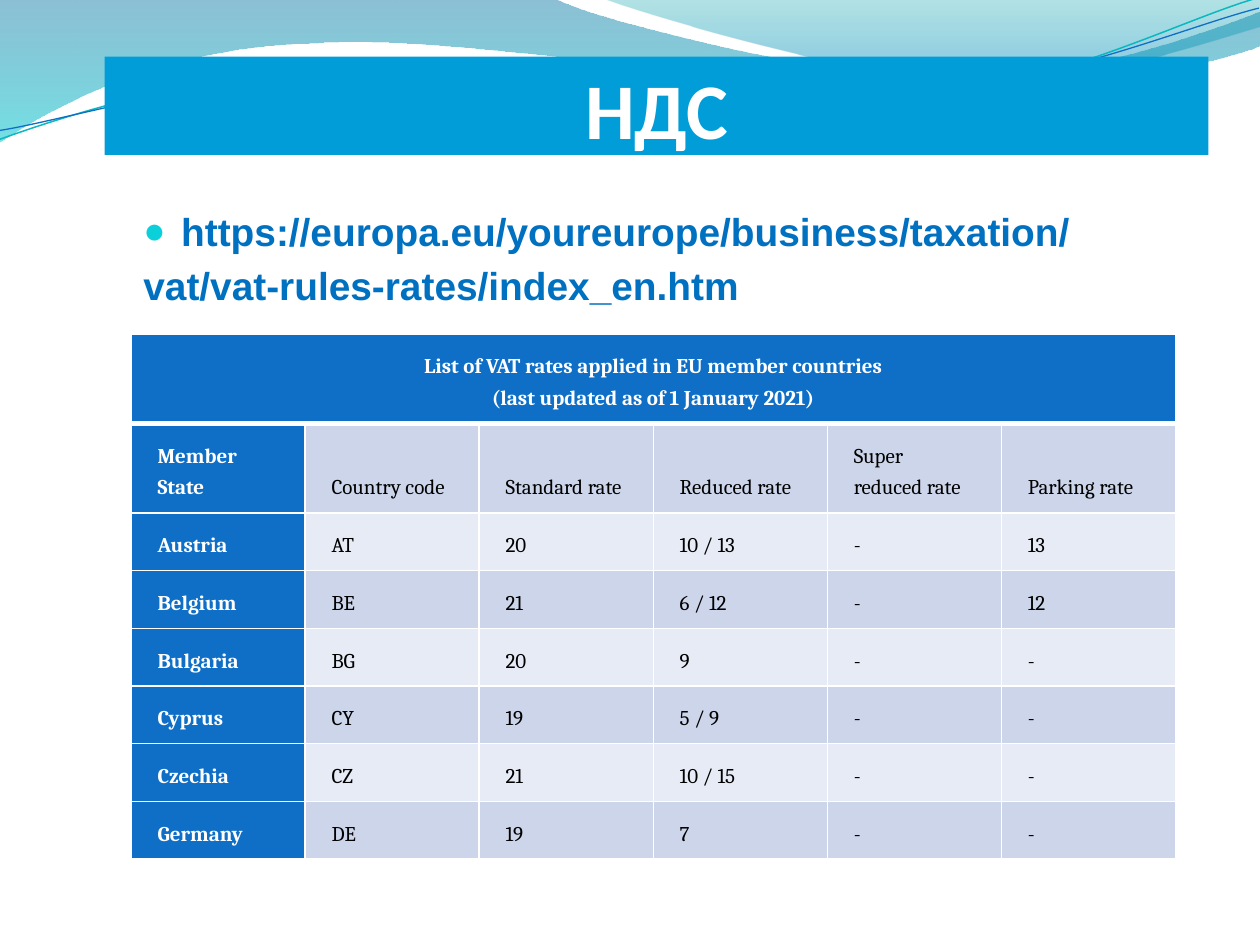
from lxml import etree
from pptx import Presentation
from pptx import util as u
from pptx.dml.color import RGBColor
from pptx.enum import text
from pptx.oxml.ns import qn

WHITE = RGBColor(0xFF, 0xFF, 0xFF)
BLACK = RGBColor(0, 0, 0)
TITLE_BLUE = RGBColor(0x00, 0x9D, 0xD9)
LINK_BLUE = RGBColor(0x00, 0x70, 0xC0)
HEADER_BLUE = RGBColor(0x0F, 0x6F, 0xC6)
BULLET_CYAN = RGBColor(0x0B, 0xD0, 0xD9)
LINE_TEAL = RGBColor(0x0A, 0xB8, 0xBF)
BANDS = (RGBColor(0xCC, 0xD5, 0xEA), RGBColor(0xE7, 0xEB, 0xF5))
UPPER_WAVE = ((0, RGBColor(0x00, 0x74, 0xA1), 45), (1, RGBColor(0x00, 0xC6, 0xCF), 55))
RIGHT_WAVE = ((0, RGBColor(0x00, 0xA1, 0xA9), 30), (0.8, RGBColor(0x00, 0x8B, 0xBF), 45))
THREAD_ROTATION = 357.3

TABLE_TITLE = "List of VAT rates applied in EU member countries\n(last updated as of 1 January 2021)"
RATES = [
    ("Member State", "Country code", "Standard rate", "Reduced rate", "Super reduced rate", "Parking rate"),
    ("Austria", "AT", "20", "10 / 13", "-", "13"),
    ("Belgium", "BE", "21", "6 / 12", "-", "12"),
    ("Bulgaria", "BG", "20", "9", "-", "-"),
    ("Cyprus", "CY", "19", "5 / 9", "-", "-"),
    ("Czechia", "CZ", "21", "10 / 15", "-", "-"),
    ("Germany", "DE", "19", "7", "-", "-"),
]


class SlideBuilder:
    def __init__(self, presentation):
        self.slide = presentation.slides.add_slide(presentation.slide_layouts[5])
        self.shapes = self.slide.shapes

    def format_text(self, frame, font, size, color, bold=True):
        for paragraph in frame.paragraphs:
            for run in paragraph.runs:
                run.font.name = font
                run.font.size = u.Pt(size)
                run.font.bold = bold
                run.font.color.rgb = color

    def outline(self, start, segments, close):
        nodes = [(u.Inches(s[i]), u.Inches(s[i + 1])) for s in segments for i in range(0, len(s), 2)]
        builder = self.shapes.build_freeform(*map(u.Inches, start))
        builder.add_line_segments(nodes, close=close)
        shape = builder.convert_to_shape()
        shape.shadow.inherit = False
        steps = iter(list(shape._element.iter(qn("a:lnTo"))))
        for segment in segments:
            step = next(steps)
            if len(segment) == 6:
                step.tag = qn("a:cubicBezTo")
                for _ in range(2):
                    control = next(steps)
                    step.append(control[0])
                    control.getparent().remove(control)
        return shape

    def wave(self, start, segments, stops):
        shape = self.outline(start, segments, True)
        shape.line.fill.background()
        shape.fill.gradient()
        shape.fill.gradient_angle = 270
        for stop, (position, color, _) in zip(shape.fill.gradient_stops, stops):
            stop.position = position
            stop.color.rgb = color
        for color, (_, _, opacity) in zip(shape._element.spPr.iter(qn("a:srgbClr")), stops):
            etree.SubElement(color, qn("a:alpha"), val=str(opacity * 1000))

    def thread(self, start, segments, color, width):
        shape = self.outline(start, segments, False)
        shape.rotation = THREAD_ROTATION
        shape.fill.background()
        shape.line.color.rgb = color
        shape.line.width = u.Pt(width)

    def title(self, words, left, top, width, height):
        title = self.shapes.title
        title.left, title.top, title.width, title.height = map(u.Inches, (left, top, width, height))
        title.fill.solid()
        title.fill.fore_color.rgb = TITLE_BLUE
        frame = title.text_frame
        frame.text = words
        frame.auto_size = text.MSO_AUTO_SIZE.NONE
        frame.vertical_anchor = text.MSO_ANCHOR.BOTTOM
        frame.margin_left = frame.margin_right = frame.margin_bottom = 0
        frame.margin_top = u.Inches(0.05)
        frame.paragraphs[0].alignment = text.PP_ALIGN.CENTER
        self.format_text(frame, "Calibri", 45, WHITE)
        self.shapes._spTree.append(title._element)

    def link(self, words, left, top, width, height):
        frame = self.shapes.add_textbox(*map(u.Inches, (left, top, width, height))).text_frame
        frame.word_wrap = True
        frame.text = words
        for paragraph in frame.paragraphs:
            paragraph.space_before = u.Pt(4.4)
        self.format_text(frame, "Arial", 22.2, LINK_BLUE)
        properties = frame.paragraphs[0]._p.get_or_add_pPr()
        properties.set("marL", str(u.Inches(0.3)))
        properties.set("indent", str(u.Inches(-0.3)))
        bullet_color = etree.SubElement(properties, qn("a:buClr"))
        etree.SubElement(bullet_color, qn("a:srgbClr"), val=str(BULLET_CYAN))
        etree.SubElement(properties, qn("a:buSzPct"), val="95000")
        etree.SubElement(properties, qn("a:buFont"), typeface="Arial")
        etree.SubElement(properties, qn("a:buChar"), char="●")

    def cell(self, cell, words, fill, color, bold, bottom=1, alignment=text.PP_ALIGN.LEFT):
        properties = cell._tc.get_or_add_tcPr()
        for side, width in (("L", 1), ("R", 1), ("T", 1), ("B", bottom)):
            border = etree.SubElement(properties, qn("a:ln" + side), w=str(u.Pt(width)))
            solid = etree.SubElement(border, qn("a:solidFill"))
            etree.SubElement(solid, qn("a:srgbClr"), val=str(WHITE))
        cell.fill.solid()
        cell.fill.fore_color.rgb = fill
        cell.vertical_anchor = text.MSO_ANCHOR.BOTTOM
        cell.margin_left = cell.margin_right = u.Inches(0.21)
        cell.margin_top = cell.margin_bottom = u.Inches(0.1)
        cell.text_frame.text = words
        for paragraph in cell.text_frame.paragraphs:
            paragraph.alignment = alignment
            paragraph.line_spacing = u.Pt(18)
        self.format_text(cell.text_frame, "Cambria", 12, color, bold)

    def rates_table(self, heading, rates, left, top, width, height):
        columns = len(rates[0])
        table = self.shapes.add_table(
            len(rates) + 1, columns, *map(u.Inches, (left, top, width, height))).table
        tall = 0.71
        short = (height - 2 * tall) / (len(rates) - 1)
        for index, row in enumerate(table.rows):
            row.height = u.Inches(tall if index < 2 else short)
        for column in range(columns):
            self.cell(table.cell(0, column), "" if column else heading, HEADER_BLUE, WHITE, True,
                      3, text.PP_ALIGN.CENTER)
        table.cell(0, 0).merge(table.cell(0, columns - 1))
        for row, values in enumerate(rates):
            for column, value in enumerate(values):
                is_state = column == 0
                self.cell(table.cell(row + 1, column), value,
                          HEADER_BLUE if is_state else BANDS[row % 2],
                          WHITE if is_state else BLACK, is_state)


def main():
    presentation = Presentation()
    presentation.slide_width, presentation.slide_height = u.Inches(10), u.Inches(7.5)
    vat = SlideBuilder(presentation)
    vat.wave((0, 0), [
        (4.4, -0.01), (4.76, 0.17, 6.64, 0.63, 7.58, 0.63), (8.53, 0.63, 9.58, 0.26, 10, 0.09),
        (10.01, 0.36), (9.83, 0.44, 8.7, 0.76, 7.46, 0.75), (6.22, 0.75, 3.82, 0.28, 2.57, 0.34),
        (1.29, 0.36, 0.46, 0.83, -0.01, 1.13)], UPPER_WAVE)
    vat.wave((4.79, -0.01), [
        (5.09, 0.11, 6.82, 0.62, 7.69, 0.65), (8.56, 0.69, 9.61, 0.32, 10, 0.21),
        (10, 0)], RIGHT_WAVE)
    vat.thread((-0.02, 0.87), [
        (0.47, 0.72, 1.58, 0.41, 2.78, 0.42), (3.96, 0.42, 5.91, 0.93, 7.12, 0.9),
        (8.32, 0.87, 9.4, 0.36, 10, 0.22)], LINE_TEAL, 0.85)
    vat.thread((-0.02, 0.8), [
        (0.46, 0.75, 1.64, 0.45, 2.83, 0.46), (4.03, 0.46, 5.96, 0.88, 7.16, 0.85),
        (8.35, 0.83, 9.42, 0.42, 10.01, 0.3)], HEADER_BLUE, 0.75)
    vat.title("НДС", 0.83, 0.45, 8.76, 0.78)
    vat.link("https://europa.eu/youreurope/business/taxation/\nvat/vat-rules-rates/index_en.htm",
             1.04, 1.6, 8.37, 0.89)
    vat.rates_table(TABLE_TITLE, RATES, 1.04, 2.65, 8.29, 4.17)
    presentation.save("out.pptx")


if __name__ == "__main__":
    main()
